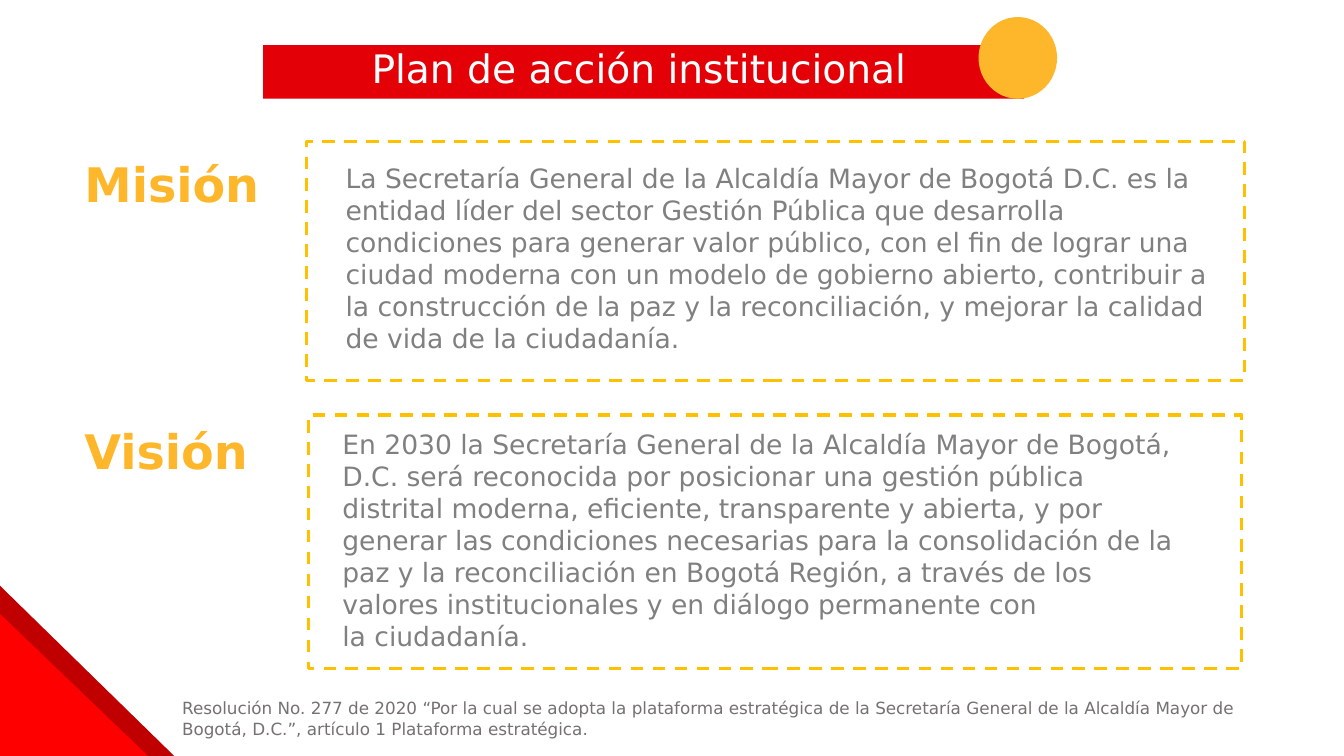
import pptx
import pptx.util
import pptx.dml.color
import pptx.enum.dml
import pptx.enum.shapes
import pptx.enum.text

Cm, Pt = pptx.util.Cm, pptx.util.Pt
Kind = pptx.enum.shapes.MSO_SHAPE
Align = pptx.enum.text.PP_ALIGN

# Content: "~" marks a space that keeps two words on one line
TITLE = "Plan de acción institucional"
SOURCE = (
    "Resolución No. 277 de 2020 “Por la cual se adopta la plataforma estratégica de la "
    "Secretaría General de la Alcaldía Mayor de Bogotá, D.C.”, artículo 1 Plataforma estratégica."
)
# Boxes are left, top, width, height in centimetres
SECTIONS = [
    {
        "heading": "Misión",
        "heading_top": 2.39,
        "body": (
            "La Secretaría General de la Alcaldía Mayor de~Bogotá D.C. es la entidad líder del "
            "sector Gestión~Pública que desarrolla condiciones para generar~valor público, con "
            "el fin de lograr una ciudad~moderna con un modelo de gobierno abierto,~contribuir a "
            "la construcción de la paz y la~reconciliación, y mejorar la calidad de vida de "
            "la~ciudadanía."
        ),
        "body_box": (8.46, 3.96, 22.35, 5.94),
        "frame": (7.72, 3.56, 23.65, 6.02),
    },
    {
        "heading": "Visión",
        "heading_top": 9.12,
        "body": (
            "En 2030 la Secretaría General de la Alcaldía~Mayor de Bogotá, D.C. será reconocida "
            "por~posicionar una gestión pública distrital~moderna, eficiente, transparente y "
            "abierta, y~por generar las condiciones necesarias para la~consolidación de la paz y "
            "la reconciliación en~Bogotá Región, a través de los valores~institucionales y en "
            "diálogo permanente con la~ciudadanía."
        ),
        "body_box": (8.38, 10.67, 22.5, 6.76),
        "frame": (7.77, 10.46, 23.52, 6.38),
    },
]
CORNER = [("dark_red", 4.39, 4.29), ("red", 3.73, 3.58)]  # colour, width, height
BANNER = (6.63, 1.14, 19.18, 1.35)
CIRCLE = (24.66, 0.43, 1.98, 2.06)
TITLE_BOX = (4.39, 0.99, 23.42, 1.45)
SOURCE_BOX = (4.34, 17.42, 27.56, 1.32)
HEADING_LEFT, HEADING_WIDTH, HEADING_HEIGHT = 1.88, 10.9, 2.67
PAGE_WIDTH, PAGE_HEIGHT = 33.87, 19.05

THEME = {
    "font": "DejaVu Sans",
    "colors": {
        "amber": "FEB72B", "gold": "FFC000", "banner": "E30006", "dark_red": "C00000",
        "red": "FF0000", "body": "808080", "source": "767171", "white": "FFFFFF",
    },
    "text": {  # size, colour, bold, paragraph format
        "title": (28, "white", False, {"alignment": Align.CENTER}),
        "heading": (34, "amber", True, {"line_spacing": Pt(80)}),
        "body": (19, "body", False, {}),
        "source": (12, "source", False, {"line_spacing": 1.07, "space_after": Pt(8)}),
    },
}


def color(name):
    return pptx.dml.color.RGBColor.from_string(THEME["colors"][name])


def apply(target, values):
    for name, value in values.items():
        setattr(target, name, value)


def add_text(page, box, text, style):
    size, color_name, bold, para_format = THEME["text"][style]
    frame = page.shapes.add_textbox(*map(Cm, box)).text_frame
    apply(frame, {"word_wrap": True, "auto_size": pptx.enum.text.MSO_AUTO_SIZE.SHAPE_TO_FIT_TEXT})
    para = frame.paragraphs[0]
    apply(para, para_format)
    span = para.add_run()
    span.text = text.replace("~", chr(160))
    apply(span.font, {"name": THEME["font"], "size": Pt(size), "bold": bold})
    span.font.color.rgb = color(color_name)


def add_figure(page, kind, box, fill=None, line=None):
    shape = page.shapes.add_shape(kind, *map(Cm, box))
    shape.shadow.inherit = False
    if fill:
        shape.fill.solid()
        shape.fill.fore_color.rgb = color(fill)
    else:
        shape.fill.background()
    if line:
        shape.line.color.rgb = color(line)
        apply(shape.line, {"width": Pt(2.25), "dash_style": pptx.enum.dml.MSO_LINE.DASH})
    else:
        shape.line.fill.background()


def main():
    deck = pptx.Presentation()
    apply(deck, {"slide_width": Cm(PAGE_WIDTH), "slide_height": Cm(PAGE_HEIGHT)})
    page = deck.slides.add_slide(deck.slide_layouts[6])

    # Mission and vision
    for section in SECTIONS:
        heading_box = (HEADING_LEFT, section["heading_top"], HEADING_WIDTH, HEADING_HEIGHT)
        add_text(page, heading_box, section["heading"], "heading")
        add_text(page, section["body_box"], section["body"], "body")
        add_figure(page, Kind.RECTANGLE, section["frame"], line="gold")

    # Source note
    add_text(page, SOURCE_BOX, SOURCE, "source")

    # Corner triangles stand on the bottom left corner of the page
    for fill, width, height in CORNER:
        box = (0, PAGE_HEIGHT - height, width, height)
        add_figure(page, Kind.RIGHT_TRIANGLE, box, fill=fill)

    # Title banner
    add_figure(page, Kind.RECTANGLE, BANNER, fill="banner")
    add_figure(page, Kind.OVAL, CIRCLE, fill="amber")
    add_text(page, TITLE_BOX, TITLE, "title")

    deck.save("out.pptx")


if __name__ == "__main__":
    main()
